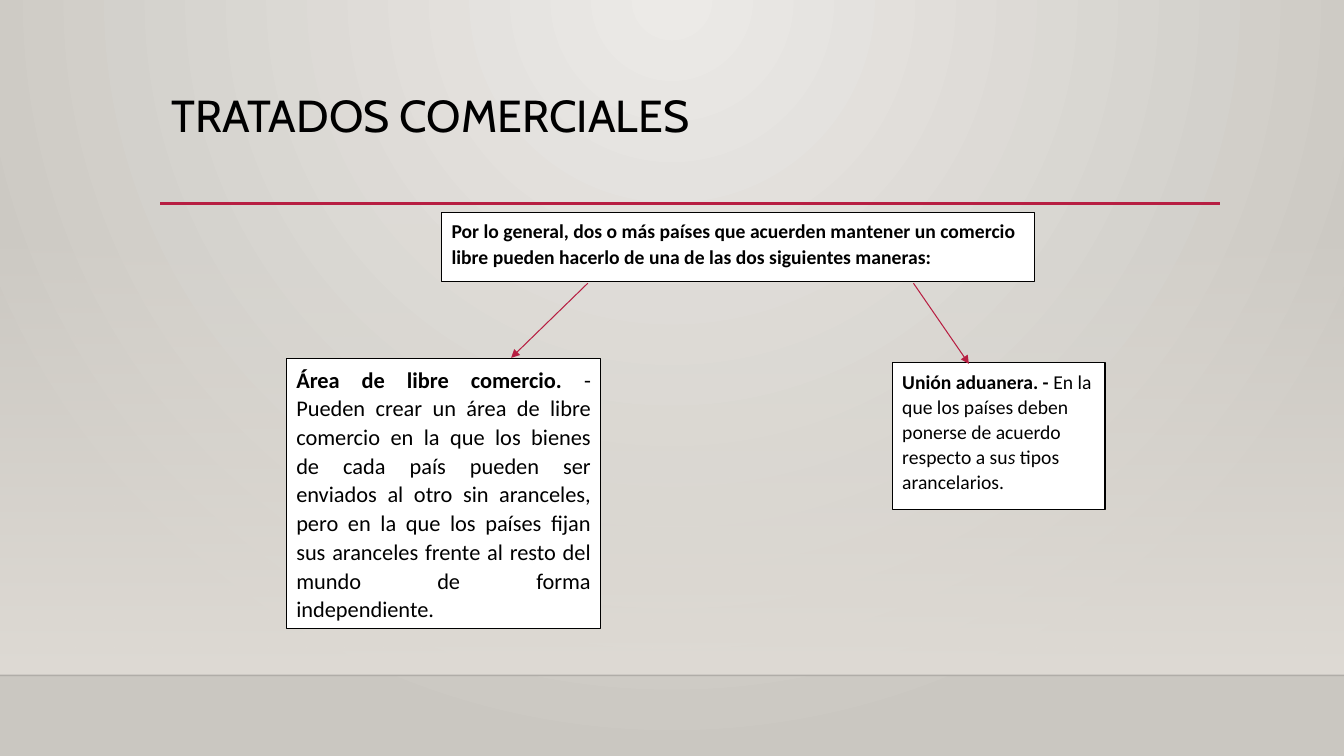
from dataclasses import dataclass

import pptx
import pptx.dml.color
import pptx.enum.shapes
import pptx.enum.text
import pptx.oxml
import pptx.oxml.ns
import pptx.util
from lxml import etree

RGBColor = pptx.dml.color.RGBColor
Align = pptx.enum.text.PP_ALIGN
qn = pptx.oxml.ns.qn

BLACK = RGBColor(0x00, 0x00, 0x00)
WHITE = RGBColor(0xFF, 0xFF, 0xFF)
CRIMSON = RGBColor(0xB7, 0x1E, 0x42)
GLOW = RGBColor(0xEC, 0xEA, 0xE7)
STONE = RGBColor(0xCA, 0xC7, 0xC1)
SAND = RGBColor(0xDF, 0xDB, 0xD5)

EMU_PER_PX = 9144  # 100 px to the inch
SLIDE_WIDTH, SLIDE_HEIGHT = 1333, 750
FLOOR_TOP = 670


@dataclass
class TextRun:
    text: str
    bold: bool = False
    italic: bool = False


@dataclass
class Box:
    left: int
    top: int
    width: int
    height: int
    size: int
    runs: list[TextRun]
    align: Align = Align.LEFT


@dataclass
class Line:
    start: tuple[int, int]
    end: tuple[int, int]
    color: RGBColor
    width: float
    arrow: bool = False
    opacity: int = 100


BOXES = [
    Box(438, 211, 588, 68, 14, [
        TextRun("Por lo general, dos o más países que acuerden mantener un comercio "
                "libre pueden hacerlo de una de las dos siguientes maneras:", bold=True),
    ]),
    Box(284, 356, 312, 268, 16, [
        TextRun("Área de libre comercio.", bold=True),
        TextRun(" - Pueden crear un área de libre comercio en la que los bienes de cada "
                "país pueden ser enviados al otro sin aranceles, pero en la que los países "
                "fijan sus aranceles frente al resto del mundo de forma independiente."),
    ], Align.JUSTIFY),
    Box(885, 360, 211, 146, 14, [
        TextRun("Unión aduanera. -", bold=True),
        TextRun(" En la que los países deben ponerse de acuerdo respecto a su"),
        TextRun("s", italic=True),
        TextRun(" tipos arancelarios."),
    ]),
]

RULES = [
    Line((0, FLOOR_TOP), (SLIDE_WIDTH, FLOOR_TOP), BLACK, 1, opacity=20),
    Line((159, 202), (1210, 202), CRIMSON, 2.5),
]

ARROWS = [
    Line((583, 281), (507, 355), CRIMSON, 0.75, arrow=True),
    Line((906, 281), (961, 361), CRIMSON, 0.75, arrow=True),
]


def px(length: int) -> pptx.util.Emu:
    return pptx.util.Emu(length * EMU_PER_PX)


def set_opacity(color_element: etree._Element, percent: int) -> None:
    etree.SubElement(color_element, qn("a:alpha"), val=str(percent * 1000))


def set_gradient(fill: pptx.dml.fill.FillFormat, first: RGBColor, last: RGBColor) -> None:
    fill.gradient()
    for stop, color in zip(fill.gradient_stops, (first, last)):
        stop.color.rgb = color


def paint_background(slide: pptx.slide.Slide) -> None:
    set_gradient(slide.background.fill, GLOW, STONE)
    gradient = next(slide.element.iter(qn("a:gradFill")))
    gradient.remove(gradient.find(qn("a:lin")))
    circle = etree.Element(qn("a:path"), {"path": "circle"})
    etree.SubElement(circle, qn("a:fillToRect"), l="43000", t="0", r="43000", b="100000")
    gradient.find(qn("a:gsLst")).addnext(circle)


def add_rectangle(slide: pptx.slide.Slide, left: int, top: int, width: int,
                  height: int) -> pptx.shapes.autoshape.Shape:
    shape = slide.shapes.add_shape(pptx.enum.shapes.MSO_SHAPE.RECTANGLE,
                                   px(left), px(top), px(width), px(height))
    shape.shadow.inherit = False
    return shape


def add_wall_fade(slide: pptx.slide.Slide) -> None:
    shape = add_rectangle(slide, 0, 221, SLIDE_WIDTH, FLOOR_TOP - 221)
    set_gradient(shape.fill, SAND, SAND)
    shape.fill.gradient_angle = 270
    shape.line.fill.background()
    set_opacity(next(shape.element.spPr.iter(qn("a:srgbClr"))), 0)


def add_line(slide: pptx.slide.Slide, line: Line) -> None:
    connector = slide.shapes.add_connector(
        pptx.enum.shapes.MSO_CONNECTOR.STRAIGHT,
        *(px(value) for value in line.start + line.end))
    connector.line.color.rgb = line.color
    connector.line.width = pptx.util.Pt(line.width)
    properties = connector.element.spPr
    if line.opacity < 100:
        set_opacity(next(properties.iter(qn("a:srgbClr"))), line.opacity)
    if line.arrow:
        etree.SubElement(properties.find(qn("a:ln")), qn("a:tailEnd"), type="triangle")
    etree.SubElement(properties, qn("a:effectLst"))


def format_font(font: pptx.text.text.Font, name: str, size: int) -> None:
    font.name = name
    font.size = pptx.util.Pt(size)
    font.color.rgb = BLACK


def write_title(slide: pptx.slide.Slide, text: str) -> None:
    title = slide.shapes.title
    title.left, title.top, title.width, title.height = px(160), px(88), px(1050), px(115)
    frame = title.text_frame
    frame.text = text
    frame.word_wrap = True
    frame.auto_size = pptx.enum.text.MSO_AUTO_SIZE.NONE
    frame.vertical_anchor = pptx.enum.text.MSO_ANCHOR.TOP
    paragraph = frame.paragraphs[0]
    paragraph.alignment = Align.LEFT
    paragraph.line_spacing = 0.9
    format_font(paragraph.runs[0].font, "Cabin", 32)


def add_box(slide: pptx.slide.Slide, box: Box) -> None:
    shape = add_rectangle(slide, box.left, box.top, box.width, box.height)
    shape.fill.solid()
    shape.fill.fore_color.rgb = WHITE
    shape.line.color.rgb = BLACK
    shape.line.width = pptx.util.Pt(0.75)
    frame = shape.text_frame
    frame.word_wrap = True
    frame.vertical_anchor = pptx.enum.text.MSO_ANCHOR.TOP
    paragraph = frame.paragraphs[0]
    paragraph.alignment = box.align
    paragraph.line_spacing = 1.07
    paragraph.space_after = pptx.util.Pt(8)
    for text_run in box.runs:
        run = paragraph.add_run()
        run.text = text_run.text
        format_font(run.font, "Calibri", box.size)
        run.font.bold = text_run.bold
        run.font.italic = text_run.italic


def main() -> None:
    presentation = pptx.Presentation()
    presentation.slide_width = px(SLIDE_WIDTH)
    presentation.slide_height = px(SLIDE_HEIGHT)
    slide = presentation.slides.add_slide(presentation.slide_layouts[5])

    # Backdrop
    paint_background(slide)
    add_wall_fade(slide)
    for rule in RULES:
        add_line(slide, rule)

    # Title and diagram
    write_title(slide, "TRATADOS COMERCIALES")
    for box in BOXES:
        add_box(slide, box)
    for arrow in ARROWS:
        add_line(slide, arrow)

    presentation.save("out.pptx")


if __name__ == "__main__":
    main()
